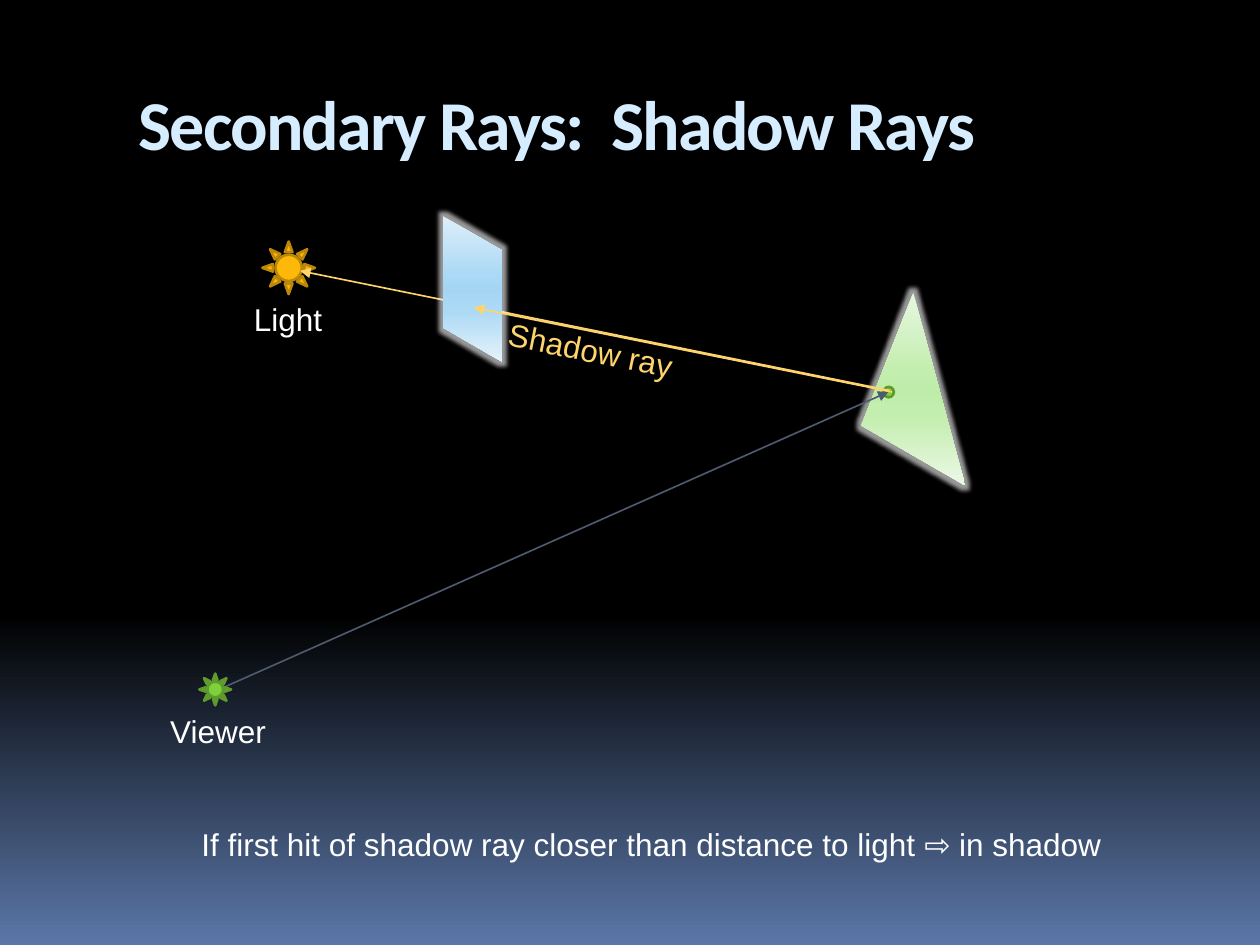
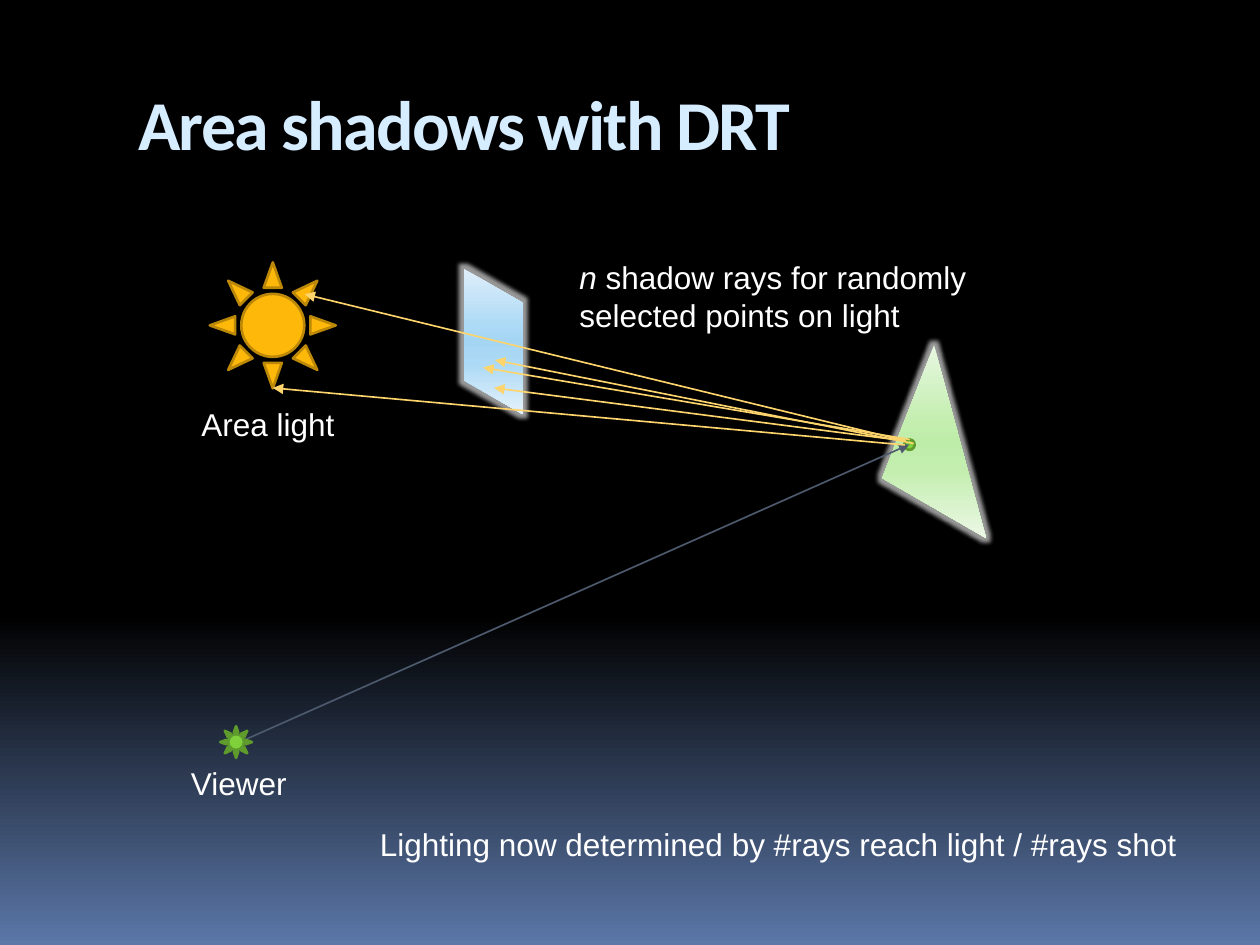
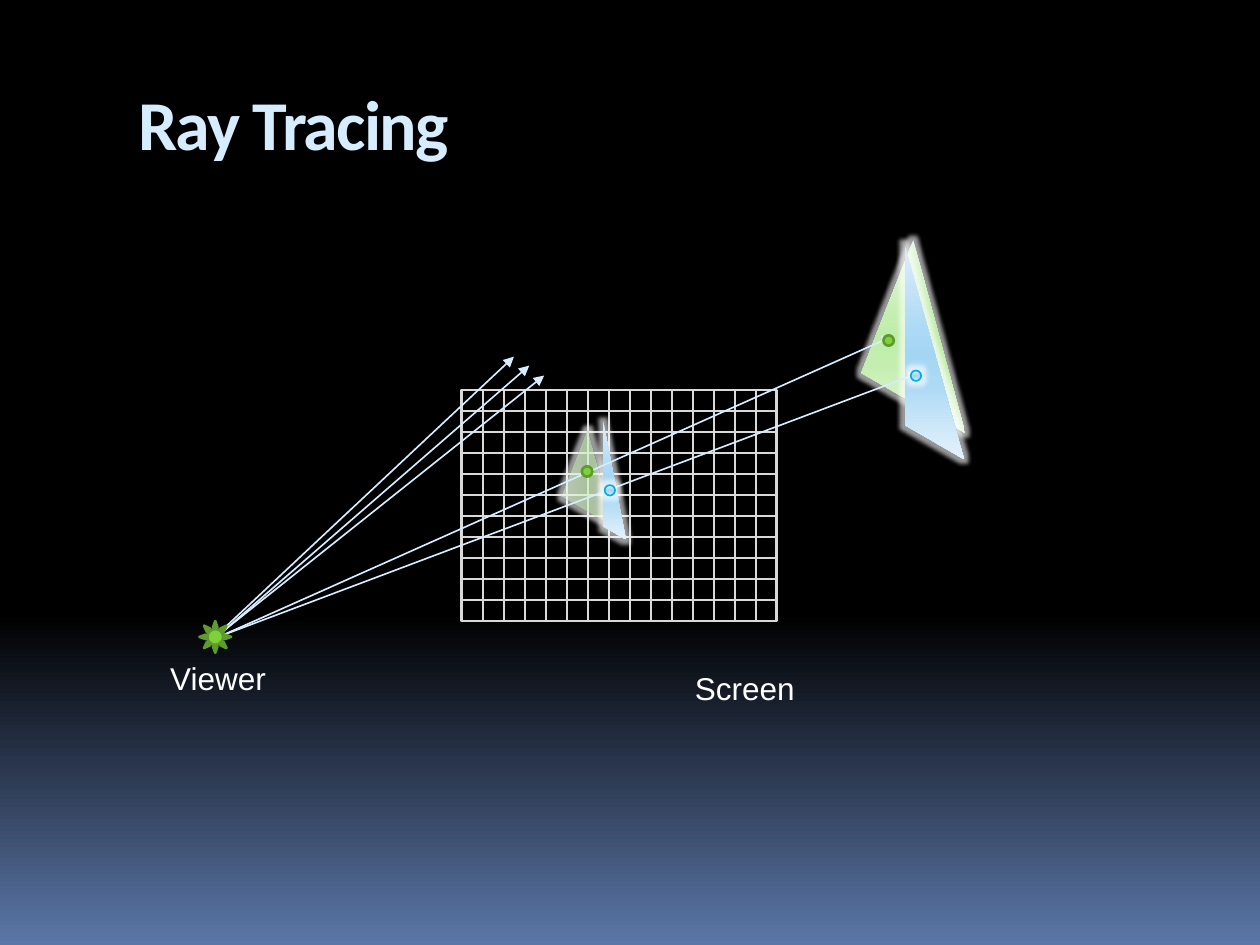
from dataclasses import dataclass
from math import cos, radians, sin, sqrt

from lxml import etree
from pptx import Presentation
from pptx.dml.color import RGBColor
from pptx.enum import shapes, text
from pptx.oxml.ns import qn
from pptx.util import Cm, Pt


@dataclass(frozen=True)
class Theme:
    title: str = "D6ECFF"
    body: str = "FFFFFF"
    shadow_ray: str = "FED46C"
    view_ray: str = "4E5B6F"
    screen: str = "D9D9D9"
    green: tuple = ("7FD13B", "5E9B2C")
    sun: tuple = ("FEB80A", "BC8807")
    blue_edge: str = "00ADDC"
    backdrop: tuple = ((0, "000000"), (65, "000000"), (100, "5B77A8"))
    green_sheen: tuple = ((0, "E6F7E0"), (40, "C4EEB0"), (50, "BEEDA9"),
                          (65, "C4EEB0"), (100, "ECF8E6"))
    blue_sheen: tuple = ((0, "DEEEFA"), (40, "ACD9F5"), (50, "A4D6F4"),
                         (65, "ACD9F5"), (100, "E5F2FB"))
    title_font: str = "Calibri"
    body_font: str = "Arial"
    title_size: float = 40
    body_size: float = 18
    thin: float = 0.94
    thick: float = 1.5


THEME = Theme()
DOT = 0.21
LABEL_HEIGHT = 1.03
SHIFT_X, SHIFT_Y = 0.42, 1.06

# Corners as fractions of the frame
TRIANGLE = ((0.5, 0), (1, 1), (0, 1))
RIGHT_TRIANGLE = ((0, 0), (1, 1), (0, 1))
RECTANGLE = ((0, 0), (1, 0), (1, 1), (0, 1))


def rgb(value):
    return RGBColor.from_string(value)


def apply(target, values):
    for name, value in values.items():
        setattr(target, name, value)


def add_colour(parent, value, alpha=100):
    colour = etree.SubElement(parent, qn("a:srgbClr"), val=value)
    if alpha < 100:
        etree.SubElement(colour, qn("a:alpha"), val=str(alpha * 1000))


def set_gradient(element, fill, stops, angle=270, alpha=100):
    """Fill with any number of stops; angle runs counter-clockwise."""
    fill.gradient()
    fill.gradient_angle = angle
    stop_list = element.find(".//" + qn("a:gsLst"))
    stop_list[:] = []
    for position, value in stops:
        stop = etree.SubElement(stop_list, qn("a:gs"), pos=str(position * 1000))
        add_colour(stop, value, alpha)


def add_glow(shape):
    effects = shape.element.spPr.find(qn("a:effectLst"))
    glow = etree.SubElement(effects, qn("a:glow"), rad=str(Pt(5)))
    add_colour(glow, "FFFFFF", 60)


def isometric(corners, left, top, width, height):
    """Turn a flat outline about the middle of its frame, as seen from the left."""
    across, slant, upright = cos(radians(45)), sin(radians(45)) / sqrt(3), sqrt(2 / 3)
    for x, y in corners:
        dx, dy = (x - 0.5) * width, (y - 0.5) * height
        yield (Cm(left + width / 2 + across * dx),
               Cm(top + height / 2 + slant * dx + upright * dy))


class Deck:
    def __init__(self, theme):
        self.theme = theme
        self.presentation = Presentation()
        apply(self.presentation, {"slide_width": Cm(25.4), "slide_height": Cm(19.05)})
        master = self.presentation.slide_master
        set_gradient(master.element, master.background.fill, theme.backdrop)
        self.shapes = None

    def slide(self, title):
        blank = self.presentation.slide_layouts[6]
        self.shapes = self.presentation.slides.add_slide(blank).shapes
        heading = self.shapes.add_textbox(Cm(2.54), Cm(1.42), Cm(21.59), Cm(2.54))
        apply(heading.text_frame, {"word_wrap": True, "margin_top": Cm(0.2)})
        run = heading.text_frame.paragraphs[0].add_run()
        run.text = title
        apply(run.font, {"name": self.theme.title_font, "bold": True,
                         "size": Pt(self.theme.title_size)})
        run.font.color.rgb = rgb(self.theme.title)
        run.font._element.set("spc", "-100")

    def label(self, words, left, top, width, height=LABEL_HEIGHT, colour=None,
              rotation=0, italic_lead=""):
        box = self.shapes.add_textbox(Cm(left), Cm(top), Cm(width), Cm(height))
        box.rotation = rotation
        apply(box.text_frame, {"word_wrap": False,
                               "auto_size": text.MSO_AUTO_SIZE.SHAPE_TO_FIT_TEXT})
        paragraph = box.text_frame.paragraphs[0]
        if italic_lead:
            lead = paragraph.add_run()
            lead.text = italic_lead
            lead.font.italic = True
        for number, line in enumerate(words.split("\n")):
            if number:
                paragraph.add_line_break()
            paragraph.add_run().text = line
        for run in paragraph.runs:
            apply(run.font, {"name": self.theme.body_font,
                             "size": Pt(self.theme.body_size)})
            run.font.color.rgb = rgb(colour or self.theme.body)

    def outline(self, item, colour, weight):
        item.line.color.rgb = rgb(colour)
        item.line.width = Pt(weight)

    def solid(self, kind, left, top, size, colours):
        fill, edge = colours
        shape = self.shapes.add_shape(kind, Cm(left), Cm(top), Cm(size), Cm(size))
        shape.shadow.inherit = False
        shape.fill.solid()
        shape.fill.fore_color.rgb = rgb(fill)
        self.outline(shape, edge, self.theme.thick)
        return shape

    def sun(self, left, top, size, colours):
        self.solid(shapes.MSO_SHAPE.SUN, left, top, size, colours)

    def green_dot(self, left, top):
        self.solid(shapes.MSO_SHAPE.OVAL, left, top, DOT, self.theme.green)

    def blue_dot(self, left, top):
        edge = self.theme.blue_edge
        dot = self.solid(shapes.MSO_SHAPE.OVAL, left, top, DOT, (edge, edge))
        dot.line.width = Pt(self.theme.thin)
        set_gradient(dot.element, dot.fill, self.theme.blue_sheen)
        add_glow(dot)

    def facet(self, corners, frame, sheen, **gradient):
        """Glowing flat surface, turned into isometric view."""
        start, *others = isometric(corners, *frame)
        builder = self.shapes.build_freeform(*start)
        builder.add_line_segments(others, close=True)
        surface = builder.convert_to_shape()
        surface.shadow.inherit = False
        surface.line.fill.background()
        set_gradient(surface.element, surface.fill, sheen, **gradient)
        add_glow(surface)

    def line(self, start, end, colour, arrow=False, parent=None):
        ends = [Cm(value) for value in (*start, *end)]
        connector = (parent or self.shapes).add_connector(
            shapes.MSO_CONNECTOR.STRAIGHT, *ends)
        self.outline(connector, colour, self.theme.thin)
        properties = connector.element.spPr
        etree.SubElement(properties, qn("a:effectLst"))
        if arrow:
            etree.SubElement(properties.find(qn("a:ln")), qn("a:tailEnd"), type="triangle")

    def rays(self, colour, *paths):
        for start, end in paths:
            self.line(start, end, colour, arrow=True)

    def screen(self, left, top, width, columns, rows):
        cell = width / columns
        right, bottom = left + width, top + rows * cell
        grid = self.shapes.add_group_shape().shapes
        frame = grid.add_shape(shapes.MSO_SHAPE.RECTANGLE, Cm(left), Cm(top),
                               Cm(width), Cm(rows * cell))
        frame.shadow.inherit = False
        frame.fill.background()
        self.outline(frame, self.theme.screen, self.theme.thick)
        for row in range(1, rows):
            y = top + row * cell
            self.line((left, y), (right, y), self.theme.screen, parent=grid)
        for column in range(1, columns):
            x = left + column * cell
            self.line((x, top), (x, bottom), self.theme.screen, parent=grid)

    def viewer(self, dx=0, dy=0):
        self.sun(4.02 + dx, 13.58 + dy, 0.64, self.theme.green)
        self.label("Viewer", 3.18 + dx, 14.22 + dy, 2.47)

    def target(self, dx=0, dy=0):
        self.facet(TRIANGLE, (16.93 + dx, 5.53 + dy, 2.96, 4.02), self.theme.green_sheen)

    def viewed_target(self, dx=0, dy=0):
        self.target(dx, dy)
        self.green_dot(17.81 + dx, 7.8 + dy)
        self.rays(self.theme.view_ray,
                  ((4.32 + dx, 13.94 + dy), (17.91 + dx, 7.9 + dy)))
        self.viewer(dx, dy)

    def blocker(self, dx=0, dy=0):
        self.facet(RECTANGLE, (8.68 + dx, 4.45 + dy, 1.69, 2.75), self.theme.blue_sheen)


def shadow_rays(deck):
    theme = deck.theme
    deck.slide("Secondary Rays:  Shadow Rays")
    deck.viewed_target()
    deck.sun(5.29, 4.87, 1.06, theme.sun)
    deck.label("Light", 4.87, 5.93, 1.91)
    deck.rays(theme.shadow_ray, ((17.93, 7.87), (6.05, 5.46)))
    deck.label("Shadow ray", 9.98, 6.55, 3.89, colour=theme.shadow_ray, rotation=11.3)
    deck.blocker()
    deck.rays(theme.shadow_ray, ((17.98, 7.9), (9.55, 6.2)))
    deck.label("If first hit of shadow ray closer than distance to light ⇨ in shadow",
               3.81, 16.51, 18.85)


def area_shadows(deck):
    theme = deck.theme
    deck.slide("Area shadows with DRT")
    deck.viewed_target(SHIFT_X, SHIFT_Y)
    deck.sun(4.23, 5.29, 2.54, theme.sun)
    deck.label("Area light", 3.81, 8.04, 3.23)
    deck.blocker(SHIFT_X, SHIFT_Y)
    deck.rays(theme.shadow_ray,
              ((18.42, 8.94), (9.98, 7.26)),
              ((18.26, 8.89), (9.96, 7.82)),
              ((18.24, 8.97), (5.5, 7.82)),
              ((18.26, 8.89), (6.14, 5.93)),
              ((18.34, 8.86), (9.74, 7.41)))
    deck.label("shadow rays for randomly\nselected points on light",
               11.43, 5.08, 8.66, height=1.79, italic_lead="n ")
    deck.label("Lighting now determined by #rays reach light / #rays shot",
               7.41, 16.51, 16.72)


def ray_tracing(deck):
    theme = deck.theme
    deck.slide("Ray Tracing")
    deck.screen(9.31, 7.86, 6.35, columns=15, rows=11)
    deck.label("Screen", 13.76, 13.36, 2.54)
    deck.target(dy=-SHIFT_Y)
    deck.facet(RIGHT_TRIANGLE, (17.99, 4.87, 1.69, 4.45), theme.blue_sheen)
    deck.rays(theme.title,
              ((4.32, 12.85), (10.36, 7.19)),
              ((4.32, 12.88), (10.67, 7.37)),
              ((4.34, 12.85), (10.97, 7.57)))
    deck.facet(TRIANGLE, (11.11, 8.48, 1.48, 2.01), theme.green_sheen, angle=0, alpha=50)
    deck.facet(RIGHT_TRIANGLE, (12.07, 8.41, 0.64, 2.57), theme.blue_sheen)
    deck.rays(theme.title,
              ((4.32, 12.88), (17.99, 6.78)),
              ((4.29, 12.88), (18.52, 7.52)))
    deck.viewer(dy=-SHIFT_Y)
    for spot in ((11.73, 9.4), (17.81, 6.76)):
        deck.green_dot(*spot)
    for spot in ((18.36, 7.47), (12.19, 9.78)):
        deck.blue_dot(*spot)


def main():
    deck = Deck(THEME)
    for build in (shadow_rays, area_shadows, ray_tracing):
        build(deck)
    deck.presentation.save("out.pptx")


if __name__ == "__main__":
    main()
